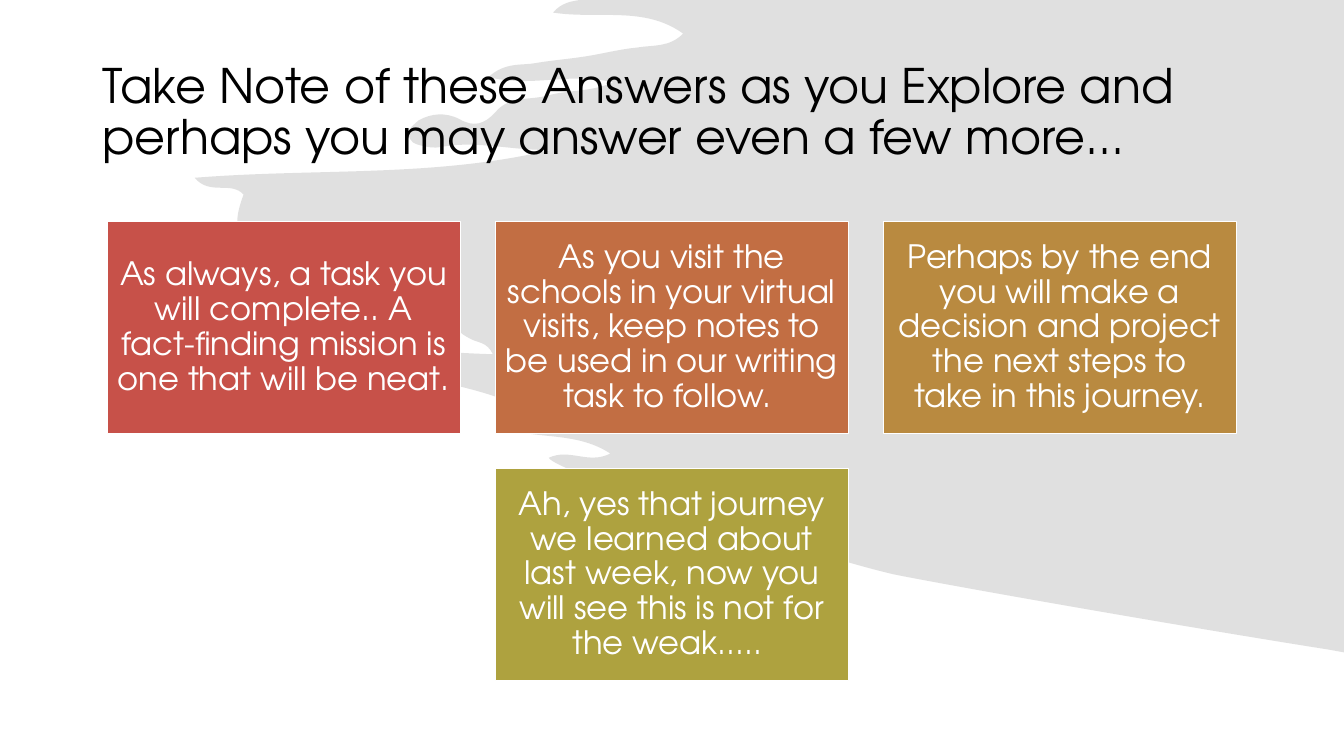
from lxml.etree import SubElement
from pptx import Presentation
from pptx.dml.color import RGBColor
from pptx.enum.shapes import MSO_SHAPE
from pptx.enum.text import MSO_ANCHOR, MSO_AUTO_SIZE, PP_ALIGN
from pptx.oxml.ns import qn
from pptx.util import Pt

COLORS = {
    "black": "000000", "white": "FFFFFF", "brush": "D9D9D9",
    "red": "C75149", "orange": "C26E43", "ochre": "B98A40", "olive": "AEA23F",
}
HARD_SPACE = chr(160)
WIDTH, HEIGHT = 960, 540
CARD_WIDTH, CARD_HEIGHT, GAP, CARDS_TOP = 252, 151.2, 25.2, 158.4
CARD_ROWS = [
    [
        ("red", "As always, a task you will complete.. A fact-finding mission is one that will be neat."),
        ("orange", "As you visit the schools in your virtual visits, keep~notes~to be used~in~our writing task to follow.~"),
        ("ochre", "Perhaps~by the end you will make a decision and project the next steps to take~in this journey."),
    ],
    [("olive", "Ah, yes that journey we learned about last week,~now you will see~this is not for the weak.....~")],
]
BRUSH_START = (414, 0)
BRUSH_CURVES = [
    (408, 1, 401, 2, 395, 9), (428, 14, 460, 4, 488, 24),
    (478, 34, 467, 32, 455, 34), (444, 35, 432, 38, 420, 40),
    (408, 42, 395, 43, 383, 45), (373, 47, 361, 44, 349, 55),
    (379, 63, 408, 51, 438, 59), (420, 66, 408, 64, 392, 68),
    (379, 72, 364, 68, 354, 80), (346, 89, 338, 91, 328, 85),
    (318, 80, 308, 81, 299, 86), (296, 89, 292, 91, 292, 95),
    (292, 102, 297, 103, 301, 104), (305, 105, 310, 106, 315, 105),
    (341, 100, 367, 108, 394, 107), (310, 127, 226, 120, 139, 127),
    (150, 140, 165, 129, 174, 139), (166, 160, 168, 171, 186, 172),
    (202, 174, 219, 166, 228, 191), (230, 199, 246, 197, 256, 198),
    (276, 201, 298, 198, 318, 207), (326, 211, 331, 214, 328, 224),
    (323, 234, 328, 238, 336, 242), (341, 245, 348, 244, 352, 253),
    (308, 252, 266, 245, 222, 252), (270, 269, 322, 269, 369, 289),
    (367, 296, 356, 293, 356, 304), (380, 315, 410, 307, 436, 324),
    (420, 332, 407, 320, 392, 327), (397, 338, 605, 404, 642, 411),
    (704, 423, 860, 450, 949, 464),
]
BRUSH_CORNERS = [(WIDTH, 466), (WIDTH, 0)]


def color(name):
    """Return the named colour."""
    return RGBColor.from_string(COLORS[name])


def bend(shape, count):
    """Turn the first line segments, three at a time, into cubic curves."""
    segments = list(shape.element.iter(qn("a:lnTo")))
    for first in range(0, 3 * count, 3):
        curve, *others = segments[first:first + 3]
        for segment in others:
            curve.append(segment[0])
            segment.getparent().remove(segment)
        bezier = SubElement(curve.getparent(), qn("a:cubicBezTo"))
        curve.getparent().replace(curve, bezier)
        bezier.extend(list(curve))


def write(frame, text, *, font, size, ink, align, inset=7.2):
    """Fill a text frame with one formatted paragraph, a tilde being a hard space."""
    frame.word_wrap = True
    frame.auto_size = MSO_AUTO_SIZE.NONE
    frame.vertical_anchor = MSO_ANCHOR.MIDDLE
    frame.margin_left = frame.margin_right = Pt(inset)
    frame.margin_top = frame.margin_bottom = Pt(inset)
    para = frame.paragraphs[0]
    para.alignment = align
    para.line_spacing = 0.9
    para.space_before = Pt(0)
    span = para.add_run()
    span.text = text.replace("~", HARD_SPACE)
    span.font.name = font
    span.font.size = Pt(size)
    span.font.color.rgb = color(ink)


class SlideBuilder:
    """Hold the style and the current slide."""

    def __init__(self, page, font):
        """Keep the page and its font."""
        self.page = page
        self.font = font

    def title(self, text, left, top, width, height):
        """Place the title."""
        box = self.page.shapes.title
        box.left, box.top, box.width, box.height = map(Pt, (left, top, width, height))
        write(box.text_frame, text, font=self.font, size=34, ink="black", align=PP_ALIGN.LEFT)

    def brush(self, start, curves, corners, opacity):
        """Draw the translucent brush stroke behind everything else."""
        points = [curve[i:i + 2] for curve in curves for i in (0, 2, 4)]
        builder = self.page.shapes.build_freeform(*start, scale=Pt(1))
        builder.add_line_segments(points + corners, close=False)
        builder.add_line_segments([], close=True)
        stroke = builder.convert_to_shape()
        bend(stroke, len(curves))
        stroke.shadow.inherit = False
        stroke.line.fill.background()
        stroke.fill.solid()
        stroke.fill.fore_color.rgb = color("brush")
        tint = stroke.element.spPr.find(qn("a:solidFill"))[0]
        SubElement(tint, qn("a:alpha"), val=str(opacity * 1000))
        self.page.shapes.element.insert(2, stroke.element)

    def card(self, text, fill, left, top):
        """Draw one coloured card with its text."""
        box = self.page.shapes.add_shape(
            MSO_SHAPE.RECTANGLE, Pt(left), Pt(top), Pt(CARD_WIDTH), Pt(CARD_HEIGHT))
        box.shadow.inherit = False
        box.fill.solid()
        box.fill.fore_color.rgb = color(fill)
        box.line.color.rgb = color("white")
        box.line.width = Pt(1)
        write(box.text_frame, text, font=self.font, size=23, ink="white", align=PP_ALIGN.CENTER)

    def cards(self, rows):
        """Lay out rows of cards, each row centred on the page."""
        for row, items in enumerate(rows):
            left = (WIDTH - len(items) * (CARD_WIDTH + GAP) + GAP) / 2
            for column, (fill, text) in enumerate(items):
                self.card(text, fill, left + column * (CARD_WIDTH + GAP),
                          CARDS_TOP + row * (CARD_HEIGHT + GAP))


def main():
    """Build and save the deck."""
    deck = Presentation()
    deck.slide_width, deck.slide_height = Pt(WIDTH), Pt(HEIGHT)
    page = deck.slides.add_slide(deck.slide_layouts.get_by_name("Title Only"))
    page.background.fill.solid()
    page.background.fill.fore_color.rgb = color("white")
    builder = SlideBuilder(page, "TeX Gyre Adventor")
    builder.brush(BRUSH_START, BRUSH_CURVES, BRUSH_CORNERS, opacity=80)
    builder.title("Take Note of these Answers as you Explore and perhaps you may answer even a few more...",
                  66, 28.8, 828, 104.4)
    builder.cards(CARD_ROWS)
    deck.save("out.pptx")


if __name__ == "__main__":
    main()
